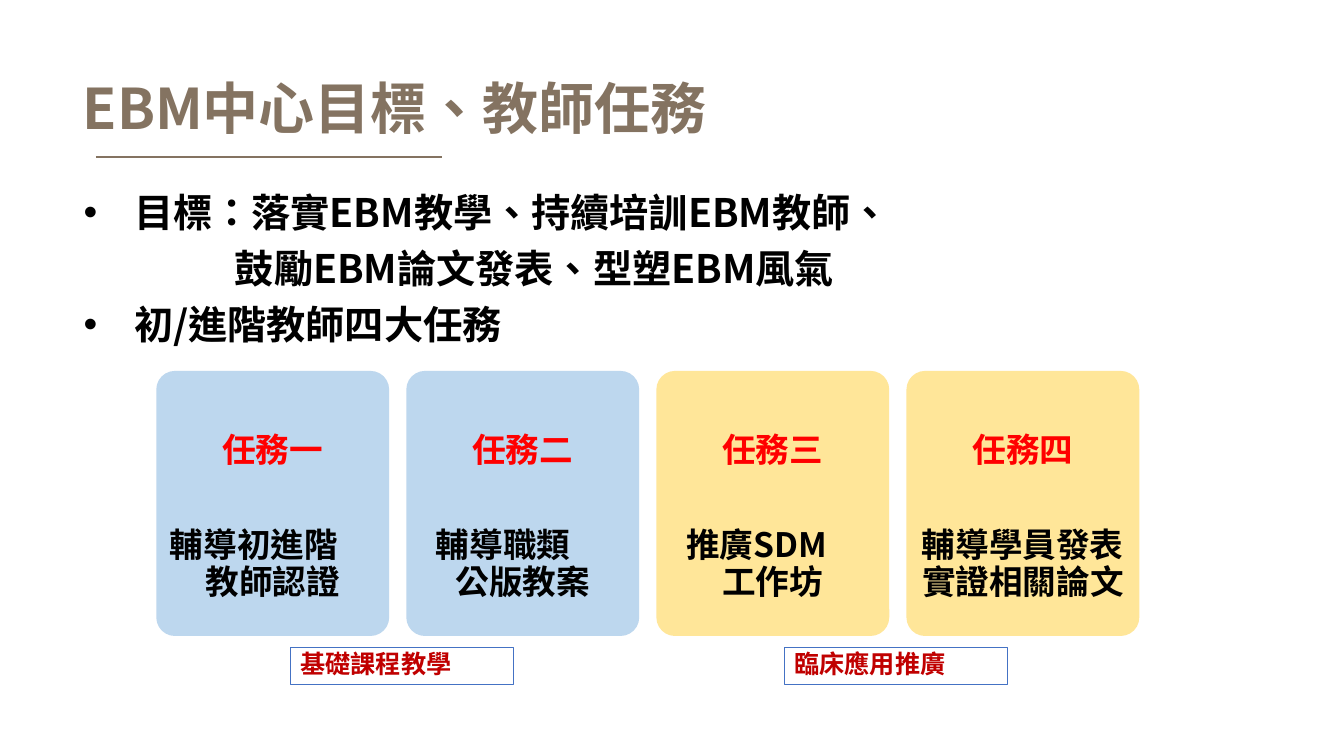
from lxml.etree import SubElement
from pptx import Presentation
from pptx.dml.color import RGBColor
from pptx.enum.lang import MSO_LANGUAGE_ID as Language
from pptx.enum.shapes import MSO_CONNECTOR, MSO_SHAPE
from pptx.enum.text import MSO_ANCHOR, MSO_AUTO_SIZE, PP_ALIGN as Align
from pptx.oxml.ns import qn
from pptx.util import Inches, Pt

FONT = "Noto Sans CJK SC"
BROWN = RGBColor(0x84, 0x73, 0x61)
BLACK = RGBColor(0x00, 0x00, 0x00)
RED = RGBColor(0xFF, 0x00, 0x00)
DARK_RED = RGBColor(0xC0, 0x00, 0x00)
LIGHT_BLUE = RGBColor(0xBD, 0xD7, 0xEE)
LIGHT_YELLOW = RGBColor(0xFF, 0xE6, 0x99)
BORDER_BLUE = RGBColor(0x44, 0x72, 0xC4)

GOALS = [
    ("目標：落實EBM教學、持續培訓EBM教師、", True),
    ("鼓勵EBM論文發表、型塑EBM風氣", False),
    ("初/進階教師四大任務", True),
]
TASKS = [
    ("任務一", "輔導初進階", "教師認證", 0.04, LIGHT_BLUE),
    ("任務二", "輔導職類", "公版教案", 0.2, LIGHT_BLUE),
    ("任務三", "推廣SDM", "工作坊", 0.2, LIGHT_YELLOW),
    ("任務四", "輔導學員發表", "實證相關論文", 0.06, LIGHT_YELLOW),
]
GROUPS = [("基礎課程教學", 2.88), ("臨床應用推廣", 7.78)]


def place(shape, left, top, width, height):
    """Move and size a shape, in inches."""
    shape.left, shape.top = Inches(left), Inches(top)
    shape.width, shape.height = Inches(width), Inches(height)


def prepare_frame(frame, wrap=True):
    """Anchor the text at the top and keep its size fixed."""
    frame.auto_size = MSO_AUTO_SIZE.NONE
    frame.word_wrap = wrap
    frame.vertical_anchor = MSO_ANCHOR.TOP


def set_indent(paragraph, margin, hanging=0, bullet=False):
    """Set a paragraph's indent and bullet."""
    properties = paragraph._p.get_or_add_pPr()
    properties.set("marL", str(Inches(margin)))
    properties.set("indent", str(Inches(-hanging)))
    if bullet:
        SubElement(properties, qn("a:buFont")).set("typeface", "Arial")
        SubElement(properties, qn("a:buChar")).set("char", "•")
    else:
        SubElement(properties, qn("a:buNone"))


def style(paragraph, size, color, line, after=0, align=Align.LEFT):
    """Set a paragraph's font, spacing and alignment."""
    paragraph.alignment = align
    paragraph.line_spacing = Pt(line)
    paragraph.space_before = Pt(0)
    paragraph.space_after = Pt(after)
    font = paragraph.font
    font.name, font.size, font.bold = FONT, Pt(size), True
    font.color.rgb = color
    font.language_id = Language.TRADITIONAL_CHINESE
    defaults = paragraph._p.pPr.find(qn("a:defRPr"))
    SubElement(defaults, qn("a:ea")).set("typeface", FONT)


def add_lines(frame, count):
    """Return the given number of paragraphs of an empty frame."""
    return [frame.paragraphs[0]] + [frame.add_paragraph() for _ in range(count - 1)]


def fill_title(title):
    """Write the slide title."""
    place(title, 0.72, 0.65, 6.53, 0.77)
    prepare_frame(title.text_frame, wrap=False)
    title.text_frame.text = "EBM中心目標、教師任務"
    style(title.text_frame.paragraphs[0], 40, BROWN, 50)


def add_title_rule(slide):
    """Draw the line under the title."""
    rule = slide.shapes.add_connector(
        MSO_CONNECTOR.STRAIGHT, Inches(0.95), Inches(1.56), Inches(4.38), Inches(1.56))
    rule.line.color.rgb = BROWN
    rule.line.width = Pt(1.5)
    SubElement(rule._element.spPr, qn("a:effectLst"))


def fill_goals(body):
    """Write the list of goals."""
    place(body, 0.73, 1.86, 11.76, 1.7)
    prepare_frame(body.text_frame)
    for paragraph, (goal, bullet) in zip(add_lines(body.text_frame, len(GOALS)), GOALS):
        paragraph.text = goal
        if bullet:
            set_indent(paragraph, 0.5, 0.5, bullet=True)
        else:
            set_indent(paragraph, 1.5)
        style(paragraph, 28, BLACK, 30.5, after=9.5)


def add_box(slide, kind, left, top, width, height):
    """Add a shape without a shadow, ready for text."""
    box = slide.shapes.add_shape(
        kind, Inches(left), Inches(top), Inches(width), Inches(height))
    box.shadow.inherit = False
    prepare_frame(box.text_frame)
    return box


def add_task(slide, left, name, lead, rest, lead_indent, color):
    """Add one task card."""
    card = add_box(slide, MSO_SHAPE.ROUNDED_RECTANGLE, left, 3.68, 2.31, 2.63)
    card.adjustments[0] = 0.08
    card.fill.solid()
    card.fill.fore_color.rgb = color
    card.line.fill.background()
    frame = card.text_frame
    frame.margin_top = Inches(0.55)
    frame.margin_left = frame.margin_right = Inches(0.04)
    heading, first, second = add_lines(frame, 3)
    heading.text, first.text, second.text = name, lead, rest
    set_indent(first, lead_indent)
    style(heading, 24, RED, 26.4, after=42, align=Align.CENTER)
    style(first, 24, BLACK, 26.4)
    style(second, 24, BLACK, 26.4, align=Align.CENTER)


def add_group_label(slide, caption, left):
    """Add the framed caption below a pair of tasks."""
    label = add_box(slide, MSO_SHAPE.RECTANGLE, left, 6.42, 2.21, 0.37)
    label.fill.background()
    label.line.color.rgb = BORDER_BLUE
    label.line.width = Pt(0.75)
    label.text_frame.text = caption
    style(label.text_frame.paragraphs[0], 18, DARK_RED, 19, align=Align.JUSTIFY)


def main():
    """Build and save the slide."""
    deck = Presentation()
    deck.slide_width, deck.slide_height = Inches(13.33), Inches(7.5)
    slide = deck.slides.add_slide(deck.slide_layouts[1])
    fill_title(slide.shapes.title)
    add_title_rule(slide)
    fill_goals(slide.placeholders[1])
    for index, task in enumerate(TASKS):
        add_task(slide, 1.55 + 2.48 * index, *task)
    for caption, left in GROUPS:
        add_group_label(slide, caption, left)
    deck.save("out.pptx")


if __name__ == "__main__":
    main()
